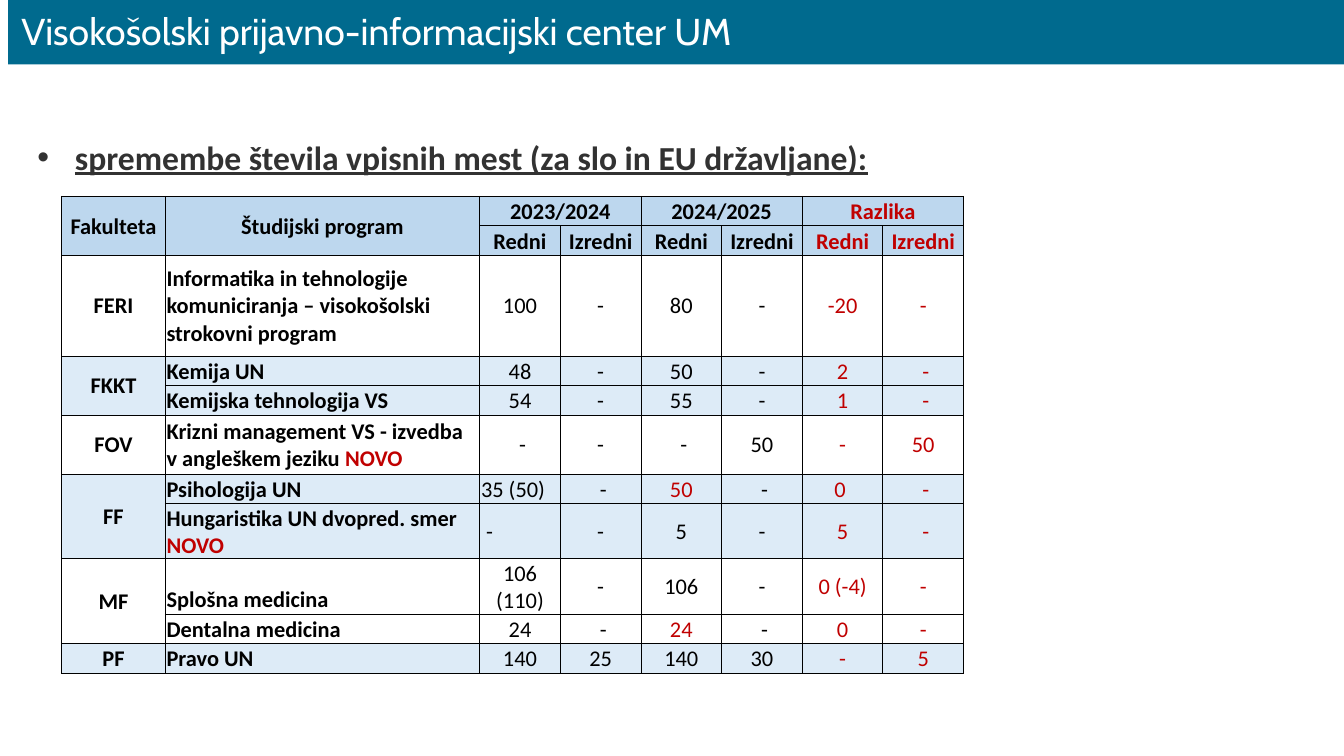
"""Build the slide on changed enrolment places by faculty and study programme."""
from dataclasses import dataclass
from typing import Optional

from lxml import etree
from pptx import Presentation
from pptx.dml.color import RGBColor
from pptx.enum.shapes import MSO_SHAPE
from pptx.enum.text import MSO_ANCHOR, PP_ALIGN
from pptx.oxml.ns import qn
from pptx.util import Inches, Pt

RECTANGLE = MSO_SHAPE.RECTANGLE
MIDDLE, BOTTOM = MSO_ANCHOR.MIDDLE, MSO_ANCHOR.BOTTOM
LEFT, CENTER, JUSTIFY = PP_ALIGN.LEFT, PP_ALIGN.CENTER, PP_ALIGN.JUSTIFY


@dataclass(frozen=True)
class Theme:
    banner: str = "006A8E"
    banner_text: str = "FFFFFF"
    heading: str = "323232"
    header_fill: str = "BDD7EE"
    band_fill: str = "DDEBF7"
    ink: str = "000000"
    accent: str = "C00000"
    banner_font: str = "Cabin"
    body_font: str = "Calibri"
    banner_size: int = 20
    heading_size: int = 18
    table_size: int = 12
    border_width: float = 0.5


@dataclass(frozen=True)
class Programme:
    name: str
    seats: tuple[str, ...]
    height: float = 0.22
    new: bool = False
    accent_2024: bool = False
    first_align: PP_ALIGN = CENTER
    name_anchor: MSO_ANCHOR = MIDDLE


@dataclass(frozen=True)
class Faculty:
    code: str
    programmes: tuple[Programme, ...]


THEME = Theme()
SLIDE_WIDTH = 10
ASPECT_RATIO = 16 / 9
HEADER_HEIGHT = 0.22
COLUMN_WIDTHS = [0.77, 2.34] + [0.6] * 6
FIRST_SEAT_COLUMN = 2
PERIODS = ("2023/2024", "2024/2025", "Razlika")
MODES = ("Redni", "Izredni")
NEW_MARK = "NOVO"
FACULTIES = (
    Faculty("FERI", (
        Programme("Informatika in tehnologije\nkomuniciranja – visokošolski strokovni program",
                  ("100", "-", "80", "-", "-20", "-"), 0.75),
    )),
    Faculty("FKKT", (
        Programme("Kemija UN", ("48", " - ", "50", " - ", "2", " -")),
        Programme("Kemijska tehnologija VS", ("54", " - ", "55", " - ", "1", " -")),
    )),
    Faculty("FOV", (
        Programme("Krizni management VS - izvedba \nv angleškem jeziku ",
                  (" -", " - ", " -", "50", " - ", "50"), 0.44, new=True),
    )),
    Faculty("FF", (
        Programme("Psihologija UN", ("35 (50)", " -", "50", " -", "0 ", " -"),
                  accent_2024=True, first_align=LEFT),
        Programme("Hungaristika UN dvopred. smer ", (" -", " - ", "5", " - ", "5", " -"),
                  0.41, new=True, first_align=LEFT, name_anchor=BOTTOM),
    )),
    Faculty("MF", (
        Programme("Splošna medicina", ("106 (110)", " - ", "106", " - ", "0 (-4)", " - "),
                  0.41, name_anchor=BOTTOM),
        Programme("Dentalna medicina", ("24", " -", "24", " -", "0", " - "), accent_2024=True),
    )),
    Faculty("PF", (
        Programme("Pravo UN", ("140", "25", "140", "30", " - ", "5")),
    )),
)


def set_font(font, face: str, size: float, color: str, bold: bool = False) -> None:
    font.name, font.size, font.bold = face, Pt(size), bold
    font.color.rgb = RGBColor.from_string(color)


def add_banner(slide, title: str) -> None:
    banner = slide.shapes.add_shape(RECTANGLE, Inches(0.06), Inches(-0.03),
                                    Inches(12.08), Inches(0.51))
    banner.shadow.inherit = False
    banner.fill.solid()
    banner.fill.fore_color.rgb = RGBColor.from_string(THEME.banner)
    banner.line.fill.background()
    banner.text_frame.vertical_anchor = MIDDLE
    paragraph = banner.text_frame.paragraphs[0]
    paragraph.text, paragraph.alignment = title, LEFT
    set_font(paragraph.font, THEME.banner_font, THEME.banner_size, THEME.banner_text)


def add_heading(slide, heading: str) -> None:
    frame = slide.shapes.add_textbox(Inches(0.18), Inches(0.87),
                                     Inches(7.5), Inches(4.32)).text_frame
    frame.word_wrap = True
    frame.margin_left = frame.margin_right = Inches(0.1)
    frame.margin_top = frame.margin_bottom = Inches(0.1)
    paragraph = frame.paragraphs[0]
    paragraph.text, paragraph.alignment = heading, JUSTIFY
    paragraph.line_spacing = 1.15
    properties = paragraph._p.get_or_add_pPr()
    properties.set("marL", str(Inches(0.28)))
    properties.set("indent", str(Inches(-0.28)))
    bullet_color = etree.SubElement(properties, qn("a:buClr"))
    etree.SubElement(bullet_color, qn("a:srgbClr"), val=THEME.heading)
    etree.SubElement(properties, qn("a:buFont"), typeface="Arial")
    etree.SubElement(properties, qn("a:buChar"), char="•")
    set_font(paragraph.font, THEME.body_font, THEME.heading_size, THEME.heading, True)
    paragraph.font.underline = True


def style_cell(cell, fill: Optional[str]) -> None:
    cell.margin_left = cell.margin_right = cell.margin_top = Inches(0.01)
    cell.margin_bottom = 0
    properties = cell._tc.get_or_add_tcPr()
    for side in ("lnL", "lnR", "lnT", "lnB"):
        border = etree.SubElement(properties, qn(f"a:{side}"), w=str(Pt(THEME.border_width)))
        ink = etree.SubElement(border, qn("a:solidFill"))
        etree.SubElement(ink, qn("a:srgbClr"), val=THEME.ink)
    if fill:
        cell.fill.solid()
        cell.fill.fore_color.rgb = RGBColor.from_string(fill)
    else:
        cell.fill.background()


def write_cell(cell, text: str, color: str = THEME.ink, bold: bool = True,
               align: PP_ALIGN = CENTER, anchor: MSO_ANCHOR = MIDDLE):
    cell.vertical_anchor = anchor
    paragraph = cell.text_frame.paragraphs[0]
    paragraph.text, paragraph.alignment = text, align
    set_font(paragraph.font, THEME.body_font, THEME.table_size, color, bold)
    return paragraph


def write_header(table) -> None:
    for column, label in enumerate(("Fakulteta", "Študijski program")):
        table.cell(0, column).merge(table.cell(1, column))
        write_cell(table.cell(0, column), label)
    for index, period in enumerate(PERIODS):
        column = FIRST_SEAT_COLUMN + index * len(MODES)
        color = THEME.accent if period == PERIODS[-1] else THEME.ink
        table.cell(0, column).merge(table.cell(0, column + 1))
        write_cell(table.cell(0, column), period, color, anchor=BOTTOM)
        for offset, mode in enumerate(MODES):
            write_cell(table.cell(1, column + offset), mode, color, anchor=BOTTOM)


def write_programme(table, row: int, programme: Programme) -> None:
    name = write_cell(table.cell(row, 1), programme.name, align=LEFT,
                      anchor=programme.name_anchor)
    if programme.new:
        mark = name.add_run()
        mark.text = NEW_MARK
        mark.font.color.rgb = RGBColor.from_string(THEME.accent)
    for index, seats in enumerate(programme.seats):
        accented = index >= 4 or (index == 2 and programme.accent_2024)
        write_cell(table.cell(row, FIRST_SEAT_COLUMN + index), seats,
                   THEME.accent if accented else THEME.ink, bold=False,
                   align=programme.first_align if index == 0 else CENTER)


def add_seat_table(slide) -> None:
    heights = [HEADER_HEIGHT] * 2 + [p.height for f in FACULTIES for p in f.programmes]
    fills = [THEME.header_fill] * 2 + [
        THEME.band_fill if index % 2 else None
        for index, faculty in enumerate(FACULTIES) for _ in faculty.programmes]
    table = slide.shapes.add_table(
        len(heights), len(COLUMN_WIDTHS), Inches(0.46), Inches(1.46),
        Inches(sum(COLUMN_WIDTHS)), Inches(sum(heights))).table
    table.first_row = table.horz_banding = False
    for column, width in zip(table.columns, COLUMN_WIDTHS):
        column.width = Inches(width)
    for row, height, fill in zip(table.rows, heights, fills):
        row.height = Inches(height)
        for cell in row.cells:
            style_cell(cell, fill)
    write_header(table)
    row = 2
    for faculty in FACULTIES:
        last = row + len(faculty.programmes) - 1
        if last > row:
            table.cell(row, 0).merge(table.cell(last, 0))
        write_cell(table.cell(row, 0), faculty.code)
        for offset, programme in enumerate(faculty.programmes):
            write_programme(table, row + offset, programme)
        row = last + 1


def main() -> None:
    deck = Presentation()
    deck.slide_width, deck.slide_height = Inches(SLIDE_WIDTH), Inches(SLIDE_WIDTH / ASPECT_RATIO)
    slide = deck.slides.add_slide(deck.slide_layouts[6])
    add_heading(slide, "spremembe števila vpisnih mest (za slo in EU državljane):")
    add_banner(slide, "Visokošolski prijavno-informacijski center UM")
    add_seat_table(slide)
    deck.save("out.pptx")


if __name__ == "__main__":
    main()
